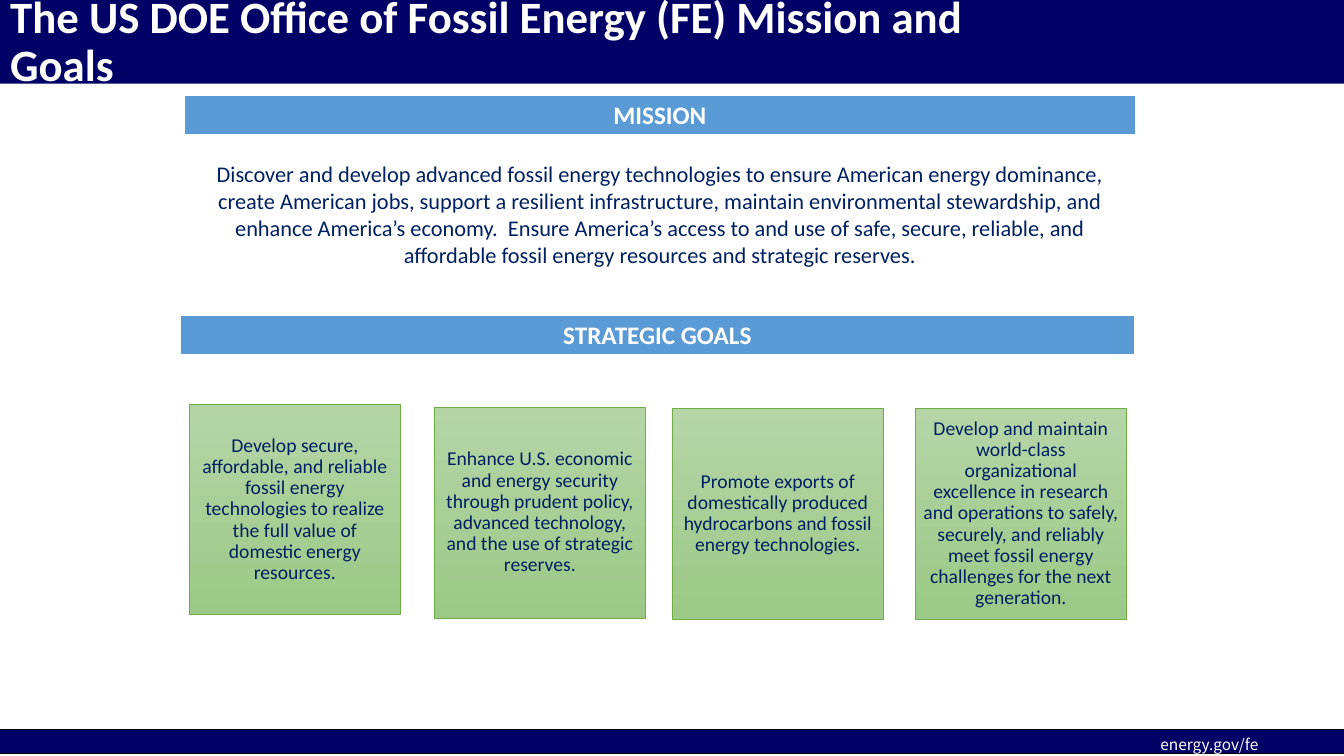
from pptx import Presentation
from pptx.dml.color import RGBColor
from pptx.enum.shapes import MSO_SHAPE
from pptx.enum.text import MSO_ANCHOR, MSO_AUTO_SIZE, PP_ALIGN
from pptx.util import Inches, Pt

RECTANGLE = MSO_SHAPE.RECTANGLE
MIDDLE, TOP = MSO_ANCHOR.MIDDLE, MSO_ANCHOR.TOP
LEFT, CENTER = PP_ALIGN.LEFT, PP_ALIGN.CENTER
NO_AUTOSIZE = MSO_AUTO_SIZE.NONE
TITLE_ONLY = 5

NAVY, TEXT_BLUE, BAND_BLUE = "000066", "002060", "5B9BD5"
GREEN_TOP, GREEN_BOTTOM, GREEN_LINE = "B5D5A7", "9CC987", "70AD47"
WHITE, BLACK = "FFFFFF", "000000"

MISSION = (
    "Discover and develop advanced fossil energy technologies to ensure American "
    "energy dominance, create American jobs, support a resilient infrastructure, "
    "maintain environmental stewardship, and enhance America’s economy.  Ensure "
    "America’s access to and use of safe, secure, reliable, and affordable fossil "
    "energy resources and strategic reserves."
)
GOALS = [
    (1.88, 4.01, "Develop secure, affordable, and reliable fossil energy technologies "
                 "to realize the full value of domestic energy resources."),
    (4.31, 4.04, "Enhance U.S. economic and energy security through prudent policy, "
                 "advanced technology, and the use of strategic reserves."),
    (6.67, 4.05, "Promote exports of domestically produced hydrocarbons and fossil "
                 "energy technologies."),
    (9.08, 4.05, "Develop and maintain world-class organizational excellence in "
                 "research and operations to safely, securely, and reliably meet "
                 "fossil energy challenges for the next generation."),
]
GOAL_SIZE = 2.09


def color(value):
    return RGBColor.from_string(value)


class MissionSlide:
    font = "Calibri"

    def __init__(self, presentation):
        self.slide = presentation.slides.add_slide(presentation.slide_layouts[TITLE_ONLY])

    def set_text(self, shape, text, size, ink, bold=False, align=CENTER, anchor=MIDDLE,
                 spacing=1.0, font=None):
        frame = shape.text_frame
        frame.text = text
        frame.word_wrap = True
        frame.auto_size = NO_AUTOSIZE
        frame.vertical_anchor = anchor
        paragraph = frame.paragraphs[0]
        paragraph.alignment = align
        paragraph.line_spacing = spacing
        paragraph.font.name = font or self.font
        paragraph.font.size = Pt(size)
        paragraph.font.bold = bold
        paragraph.font.color.rgb = color(ink)

    def title(self, text, *box):
        title = self.slide.shapes.title
        title.left, title.top, title.width, title.height = map(Inches, box)
        self.set_text(title, text, 32, WHITE, bold=True, align=LEFT, spacing=0.9)
        title.element.getparent().append(title.element)

    def rectangle(self, *box, fill=None, line=None, line_width=0.75):
        shape = self.slide.shapes.add_shape(RECTANGLE, *map(Inches, box))
        shape.shadow.inherit = False
        if fill:
            shape.fill.solid()
            shape.fill.fore_color.rgb = color(fill)
        if line:
            shape.line.color.rgb = color(line)
            shape.line.width = Pt(line_width)
        else:
            shape.line.fill.background()
        return shape

    def text(self, text, *box, **style):
        self.set_text(self.slide.shapes.add_textbox(*map(Inches, box)), text,
                      anchor=TOP, **style)

    def heading(self, text, *box):
        band = self.rectangle(*box, fill=BAND_BLUE, line=WHITE, line_width=1.5)
        self.set_text(band, text, 18, WHITE, bold=True)

    def goal(self, text, left, top):
        card = self.rectangle(left, top, GOAL_SIZE, GOAL_SIZE,
                              line=GREEN_LINE, line_width=0.5)
        card.fill.gradient()
        card.fill.gradient_angle = 270
        for stop, shade in zip(card.fill.gradient_stops, (GREEN_TOP, GREEN_BOTTOM)):
            stop.color.rgb = color(shade)
        frame = card.text_frame
        frame.margin_left = frame.margin_right = Inches(0.06)
        frame.margin_top = frame.margin_bottom = Inches(0.06)
        self.set_text(card, text, 14, TEXT_BLUE, spacing=0.9)


def main():
    presentation = Presentation()
    presentation.slide_width = Inches(13.33)
    presentation.slide_height = Inches(7.5)
    page = MissionSlide(presentation)

    page.rectangle(0, 0, 13.33, 0.83, fill=NAVY)
    page.rectangle(-0.04, 7.24, 13.41, 0.24, fill=NAVY, line=BLACK)
    page.text("energy.gov/fe", 11.41, 7.24, 1.92, 0.26, size=11, ink=WHITE,
              align=LEFT, font="Noto Sans CJK JP")
    page.title("The US DOE Office of Fossil Energy (FE) Mission and Goals",
               0, 0.01, 10.44, 0.83)

    page.text(MISSION, 1.82, 1.54, 9.45, 1.18, size=16, ink=TEXT_BLUE)
    page.heading("MISSION", 1.82, 0.94, 9.45, 0.4)
    page.heading("STRATEGIC GOALS", 1.78, 3.12, 9.48, 0.4)
    for left, top, text in GOALS:
        page.goal(text, left, top)

    presentation.save("out.pptx")


if __name__ == "__main__":
    main()
